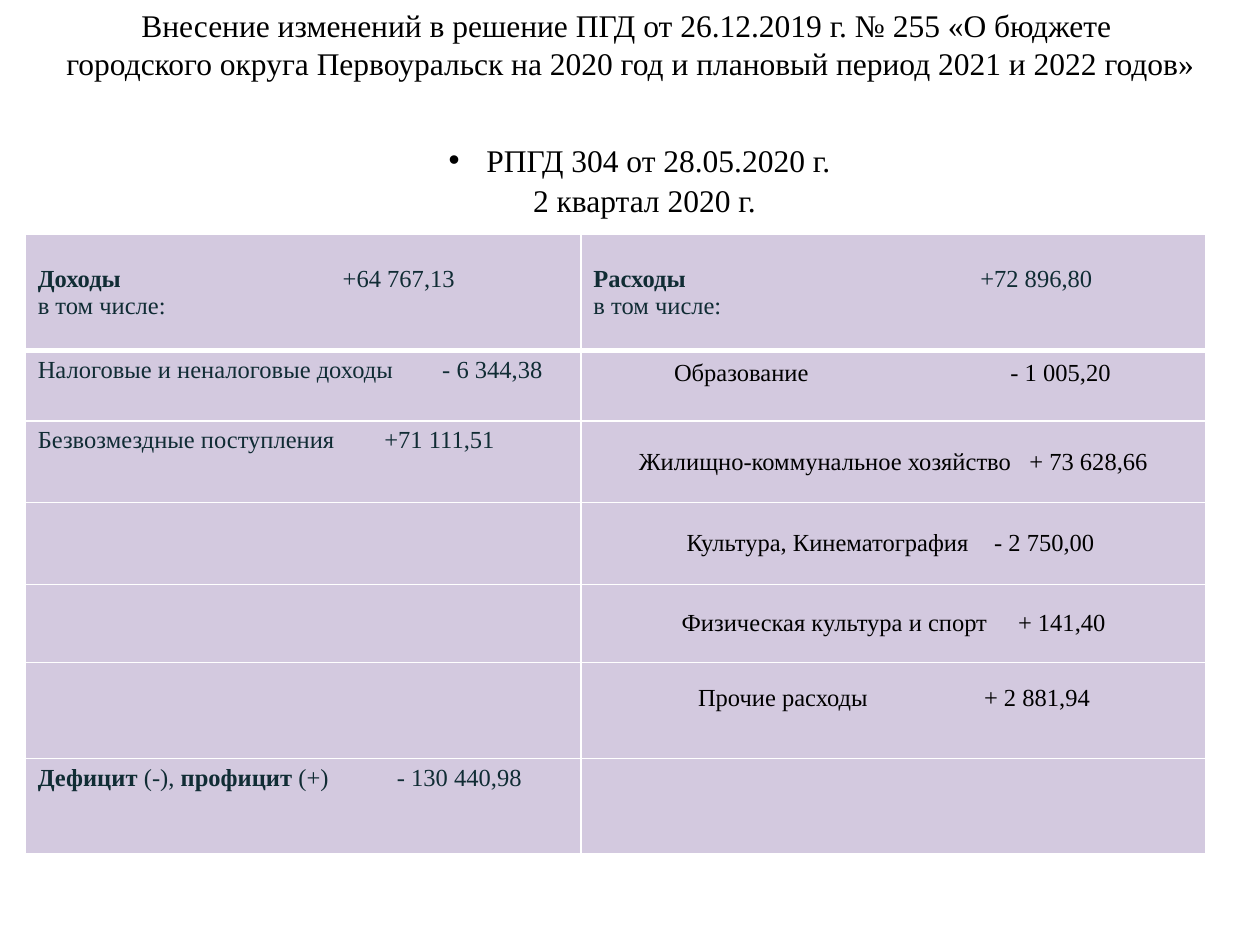
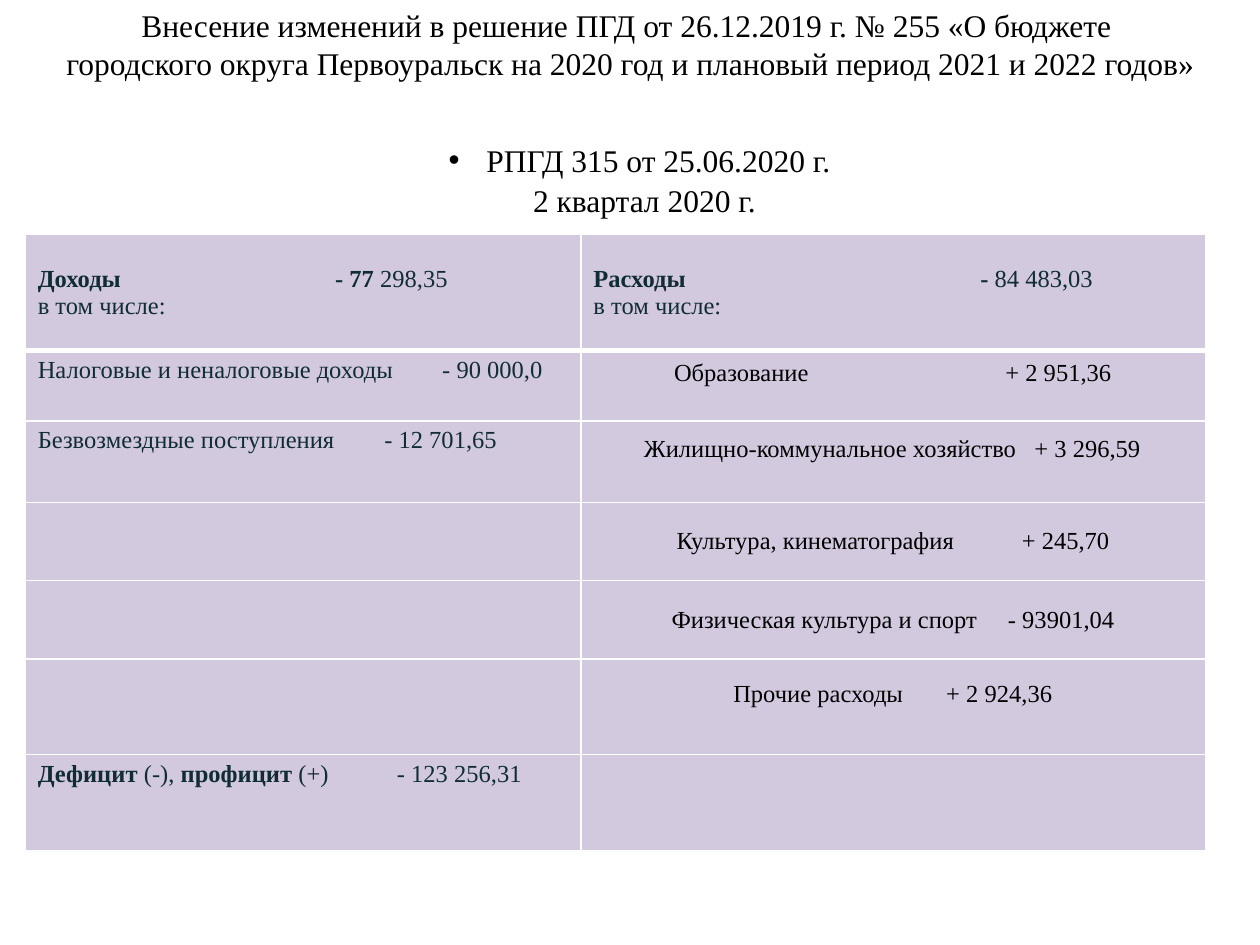
from pptx import Presentation
from pptx.dml.color import RGBColor
from pptx.enum.text import MSO_ANCHOR, MSO_AUTO_SIZE, PP_ALIGN
from pptx.oxml.ns import qn
from pptx.util import Inches, Pt
from lxml.etree import SubElement, Element

# Shared look
FONT = "Times New Roman"
BLACK = RGBColor(0x00, 0x00, 0x00)
DARK = RGBColor(0x10, 0x2C, 0x34)
LILAC = RGBColor(0xCC, 0xC1, 0xDA)
WHITE = RGBColor(0xFF, 0xFF, 0xFF)
FILL_OPACITY = 86
TEXT_SIZE, TABLE_SIZE = 18, 14
COLS = [4.41, 4.96]
CELL_X, CELL_Y = 0.1, 0.05
RAISED = 0.2  # extra bottom margin that lifts a centred line

# Shared wording
TITLE = [
    "Внесение изменений в решение ПГД от 26.12.2019 г. № 255 «О бюджете ",
    "городского округа Первоуральск на 2020 год и плановый период 2021 и 2022 годов»",
]
QUARTER = "2 квартал 2020 г."
INCLUDING = "в том числе:"
DEFICIT = [("Дефицит ", True), ("(-), ", False), ("профицит ", True), ("(+)", False)]

# Headings and income: (amount runs or amount, amount tab)
# Expenses: (label, amount, label indent, amount tab, raised)
SLIDES = [
    {
        "decision": "РПГД 304 от 28.05.2020 г.",
        "rows": [0.92, 0.56, 0.65, 0.65, 0.62, 0.76, 0.76],
        "income_total": ([("+64 767,13", False)], 2.42),
        "expense_total": ([("+72 896,80", False)], 3.07),
        "income": [("Налоговые и неналоговые доходы", "- 6 344,38", 3.21),
                   ("Безвозмездные поступления", "+71 111,51", 2.75)],
        "expenses": [
            ("Образование", "- 1 005,20", 0.64, 2.67, True),
            ("Жилищно-коммунальное хозяйство", "+ 73 628,66", 0.36, 3.1, False),
            ("Культура, Кинематография", "- 2 750,00", 0.74, 2.44, False),
            ("Физическая культура и спорт", "+ 141,40", 0.7, 2.67, False),
            ("Прочие расходы", "+ 2 881,94", 0.83, 2.27, True),
        ],
        "deficit": "- 130 440,98",
    },
    {
        "decision": "РПГД 315 от 25.06.2020 г.",
        "rows": [0.92, 0.56, 0.65, 0.62, 0.62, 0.76, 0.76],
        "income_total": ([("- 77", True), (" 298,35", False)], 2.36),
        "expense_total": ([("- ", True), ("84 483,03", False)], 3.07),
        "income": [("Налоговые и неналоговые доходы", "- 90 000,0", 3.21),
                   ("Безвозмездные поступления", "- 12 701,65", 2.75)],
        "expenses": [
            ("Образование", "+ 2 951,36", 0.64, 2.63, True),
            ("Жилищно-коммунальное хозяйство", "+ 3 296,59", 0.4, 3.1, True),
            ("Культура, кинематография", "+ 245,70", 0.66, 2.74, False),
            ("Физическая культура и спорт", "- 93901,04", 0.62, 2.67, False),
            ("Прочие расходы", "+ 2 924,36", 1.11, 1.69, True),
        ],
        "deficit": "- 123 256,31",
    },
]


def add_runs(p, runs, size, color):
    for text, bold in runs:
        r = p.add_run()
        r.text = text
        r.font.name, r.font.size, r.font.bold = FONT, Pt(size), bold
        r.font.color.rgb = color


def add_text(s, box, lines, bullet=False):
    tb = s.shapes.add_textbox(*[Inches(v) for v in box])
    tf = tb.text_frame
    tf.word_wrap = True
    tf.auto_size = MSO_AUTO_SIZE.SHAPE_TO_FIT_TEXT
    for i, line in enumerate(lines):
        p = tf.add_paragraph() if i else tf.paragraphs[0]
        p.alignment = PP_ALIGN.CENTER
        if bullet:
            pPr = p._p.get_or_add_pPr()
            pPr.set("marL", str(Inches(0.3)))
            pPr.set("indent", str(-Inches(0.3)))
            SubElement(pPr, qn("a:buFont"), typeface="Arial")
            SubElement(pPr, qn("a:buChar"), char="•")
        add_runs(p, [(line, False)], TEXT_SIZE, BLACK)


def style_cell(cell, row):
    cell.fill.solid()
    cell.fill.fore_color.rgb = LILAC
    tcPr = cell._tc.get_or_add_tcPr()
    rgb = tcPr.find(".//" + qn("a:srgbClr"))
    SubElement(rgb, qn("a:alpha"), val=str(FILL_OPACITY * 1000))
    # Thin white borders, thick one under the heading row
    widths = {"L": 1, "R": 1, "T": 3 if row == 1 else 1, "B": 3 if row == 0 else 1}
    for i, (side, width) in enumerate(widths.items()):
        ln = Element(qn("a:ln" + side), w=str(Pt(width)))
        SubElement(SubElement(ln, qn("a:solidFill")), qn("a:srgbClr"), val=str(WHITE))
        tcPr.insert(i, ln)


def fill_cell(cell, label, amount, tab, color=DARK, indent=0, anchor=MSO_ANCHOR.TOP,
              raised=False, second_line=None):
    cell.vertical_anchor = anchor
    cell.margin_left = Inches(CELL_X + indent)
    cell.margin_bottom = Inches(CELL_Y + (RAISED if raised else 0))
    p = cell.text_frame.paragraphs[0]
    tabs = SubElement(p._p.get_or_add_pPr(), qn("a:tabLst"))
    SubElement(tabs, qn("a:tab"), pos=str(Inches(tab)), algn="l")
    add_runs(p, label + [("\t", False)] + amount, TABLE_SIZE, color)
    if second_line:
        add_runs(cell.text_frame.add_paragraph(), [(second_line, False)], TABLE_SIZE, color)


def add_budget_table(s, data):
    rows = data["rows"]
    frame = s.shapes.add_table(len(rows), len(COLS), Inches(0.2), Inches(1.86),
                               Inches(sum(COLS)), Inches(sum(rows)))
    table = frame.table
    table.first_row = table.horz_banding = False
    for column, width in zip(table.columns, COLS):
        column.width = Inches(width)
    for i, height in enumerate(rows):
        table.rows[i].height = Inches(height)
        for cell in table.rows[i].cells:
            style_cell(cell, i)

    # Totals
    for col, (name, key) in enumerate([("Доходы", "income_total"), ("Расходы", "expense_total")]):
        amount, tab = data[key]
        fill_cell(table.cell(0, col), [(name, True)], amount, tab,
                  anchor=MSO_ANCHOR.MIDDLE, second_line=INCLUDING)
    # Income, expenses, deficit
    for i, (label, amount, tab) in enumerate(data["income"], 1):
        fill_cell(table.cell(i, 0), [(label, False)], [(amount, False)], tab)
    for i, (label, amount, indent, tab, raised) in enumerate(data["expenses"], 1):
        fill_cell(table.cell(i, 1), [(label, False)], [(amount, False)], tab, BLACK,
                  indent, MSO_ANCHOR.MIDDLE, raised)
    fill_cell(table.cell(len(rows) - 1, 0), DEFICIT, [(data["deficit"], False)], 2.85)


def main():
    prs = Presentation()
    prs.slide_width, prs.slide_height = Inches(10), Inches(7.5)
    for data in SLIDES:
        s = prs.slides.add_slide(prs.slide_layouts[6])
        add_budget_table(s, data)
        add_text(s, (0.2, 0, 9.61, 0.71), TITLE)
        add_text(s, (0.35, 1.07, 9.45, 0.4), [data["decision"]], bullet=True)
        add_text(s, (3.03, 1.39, 4.17, 0.4), [QUARTER])
    prs.save("out.pptx")


if __name__ == "__main__":
    main()
